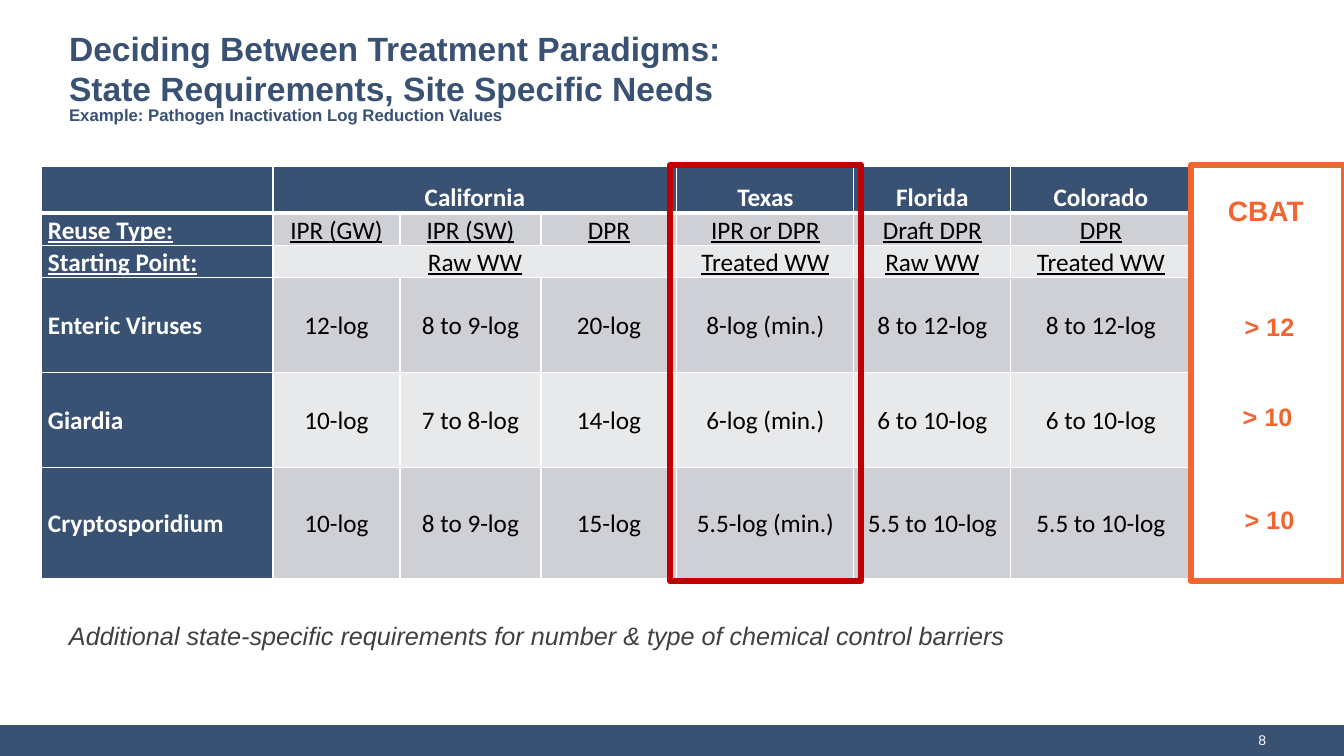
import pptx
import pptx.util
import pptx.dml.color
import pptx.enum.shapes
import pptx.enum.text
import pptx.oxml
import pptx.oxml.ns

ALIGN = pptx.enum.text.PP_ALIGN
ANCHOR = pptx.enum.text.MSO_ANCHOR
NAVY, ORANGE, RED, WHITE = "395173", "F26531", "C00000", "FFFFFF"
BANDS = ["CED0D5", "E8E9EB"]

COLUMNS = [232, 127, 141, 136, 177, 157, 180]
ROWS = [47, 31, 31, 95, 95, 111]
# None marks a cell merged into the one on its left
CELLS = [
    ["", "California", None, None, "Texas", "Florida", "Colorado"],
    ["Reuse Type:", "IPR (GW)", "IPR (SW)", "DPR", "IPR or DPR", "Draft DPR", "DPR"],
    ["Starting Point:", "Raw WW", None, None, "Treated WW", "Raw WW", "Treated WW"],
    ["Enteric Viruses", "12-log", "8 to 9-log", "20-log", "8-log (min.)", "8 to 12-log", "8 to 12-log"],
    ["Giardia", "10-log", "7 to 8-log", "14-log", "6-log (min.)", "6 to 10-log", "6 to 10-log"],
    ["Cryptosporidium", "10-log", "8 to 9-log", "15-log", "5.5-log (min.)", "5.5 to 10-log", "5.5 to 10-log"],
]


def px(n):
    return pptx.util.Emu(round(n * 914400 / 100.8))


def rgb(color):
    return pptx.dml.color.RGBColor.from_string(color)


def style_font(p, size, color, name="Arial", bold=False, italic=False, underline=False):
    for r in p.runs:
        f = r.font
        f.name, f.size, f.color.rgb = name, pptx.util.Pt(size), rgb(color)
        f.bold, f.italic, f.underline = bold, italic, underline


def add_text(s, box, text, size, color, align=ALIGN.LEFT, anchor=ANCHOR.TOP, inset=0, **font):
    tf = s.shapes.add_textbox(*map(px, box)).text_frame
    tf.word_wrap = True
    tf.vertical_anchor = anchor
    tf.margin_left = tf.margin_right = px(inset)
    tf.margin_top = tf.margin_bottom = px(5)
    tf.text = text
    p = tf.paragraphs[0]
    p.alignment = align
    style_font(p, size, color, **font)


def add_rect(s, box, fill=None, line=None):
    sp = s.shapes.add_shape(pptx.enum.shapes.MSO_SHAPE.RECTANGLE, *map(px, box))
    sp.shadow.inherit = False
    if fill:
        sp.fill.solid()
        sp.fill.fore_color.rgb = rgb(fill)
    else:
        sp.fill.background()
    if line:
        sp.line.color.rgb = rgb(line)
        sp.line.width = pptx.util.Pt(4.5)
    else:
        sp.line.fill.background()


def add_borders(cell, widths):
    """Draw white borders; widths maps each side letter to points."""
    tcPr = cell._tc.get_or_add_tcPr()
    for side, width in widths.items():
        tcPr.append(pptx.oxml.parse_xml(
            f'<a:ln{side} {pptx.oxml.ns.nsdecls("a")} w="{width * 12700}">'
            f'<a:solidFill><a:srgbClr val="{WHITE}"/></a:solidFill></a:ln{side}>'))


def fill_cell(cell, row, col, text):
    header = row == 0 or col == 0
    add_borders(cell, {"L": 1, "R": 1, "T": 3 if row == 1 else 1, "B": 3 if row == 0 else 1})
    cell.fill.solid()
    cell.fill.fore_color.rgb = rgb(NAVY if header else BANDS[(row - 1) % 2])
    cell.margin_left = cell.margin_right = px(7)
    cell.margin_top = cell.margin_bottom = 0
    cell.vertical_anchor = (ANCHOR.BOTTOM, ANCHOR.TOP, ANCHOR.TOP)[row] if row < 3 else ANCHOR.MIDDLE
    if text:
        p = cell.text_frame.paragraphs[0]
        p.text = text
        p.alignment = ALIGN.CENTER if col else ALIGN.LEFT
        p.line_spacing = 1.07
        style_font(p, 18, WHITE if header else "000000", "Calibri", bold=header, underline=row in (1, 2))


def add_requirements_table(s, left, top):
    frame = s.shapes.add_table(len(ROWS), len(COLUMNS), px(left), px(top), px(sum(COLUMNS)), px(sum(ROWS)))
    table = frame.table
    table.horz_banding = False
    for column, width in zip(table.columns, COLUMNS):
        column.width = px(width)
    for row, height in zip(table.rows, ROWS):
        row.height = px(height)
    for i, texts in enumerate(CELLS):
        for j, text in enumerate(texts):
            fill_cell(table.cell(i, j), i, j, text)
        if None in texts:
            table.cell(i, 1).merge(table.cell(i, 3))


def main():
    prs = pptx.Presentation()
    prs.slide_width, prs.slide_height = px(1344), px(756)
    s = prs.slides.add_slide(prs.slide_layouts[6])

    # Footer bar and page number
    add_rect(s, (0, 725, 1344, 31), fill=NAVY)
    add_text(s, (991, 725, 285, 29), "8", 10, WHITE, ALIGN.RIGHT, ANCHOR.MIDDLE, inset=10)

    # Heading
    add_text(s, (69, 38, 1209, 60), "Deciding Between Treatment Paradigms:\vState Requirements, Site Specific Needs",
             24, NAVY, anchor=ANCHOR.MIDDLE, bold=True)
    add_text(s, (69, 100, 900, 32), "Example: Pathogen Inactivation Log Reduction Values", 12, NAVY, bold=True)

    # State requirements
    add_requirements_table(s, 41, 166)
    add_text(s, (69, 615, 1041, 40),
             "Additional state-specific requirements for number & type of chemical control barriers",
             18, "404040", italic=True)

    # Texas highlight and CBAT column
    add_rect(s, (670, 165, 191, 416), line=RED)
    add_text(s, (1228, 188, 77, 44), "CBAT", 20, ORANGE, bold=True)
    for left, top, value in [(1212, 306, "> 12"), (1210, 396, "> 10"), (1212, 499, "> 10")]:
        add_text(s, (left, top, 115, 40), value, 18, ORANGE, ALIGN.CENTER, bold=True)
    add_rect(s, (1191, 165, 153, 416), line=ORANGE)

    prs.save("out.pptx")


if __name__ == "__main__":
    main()
